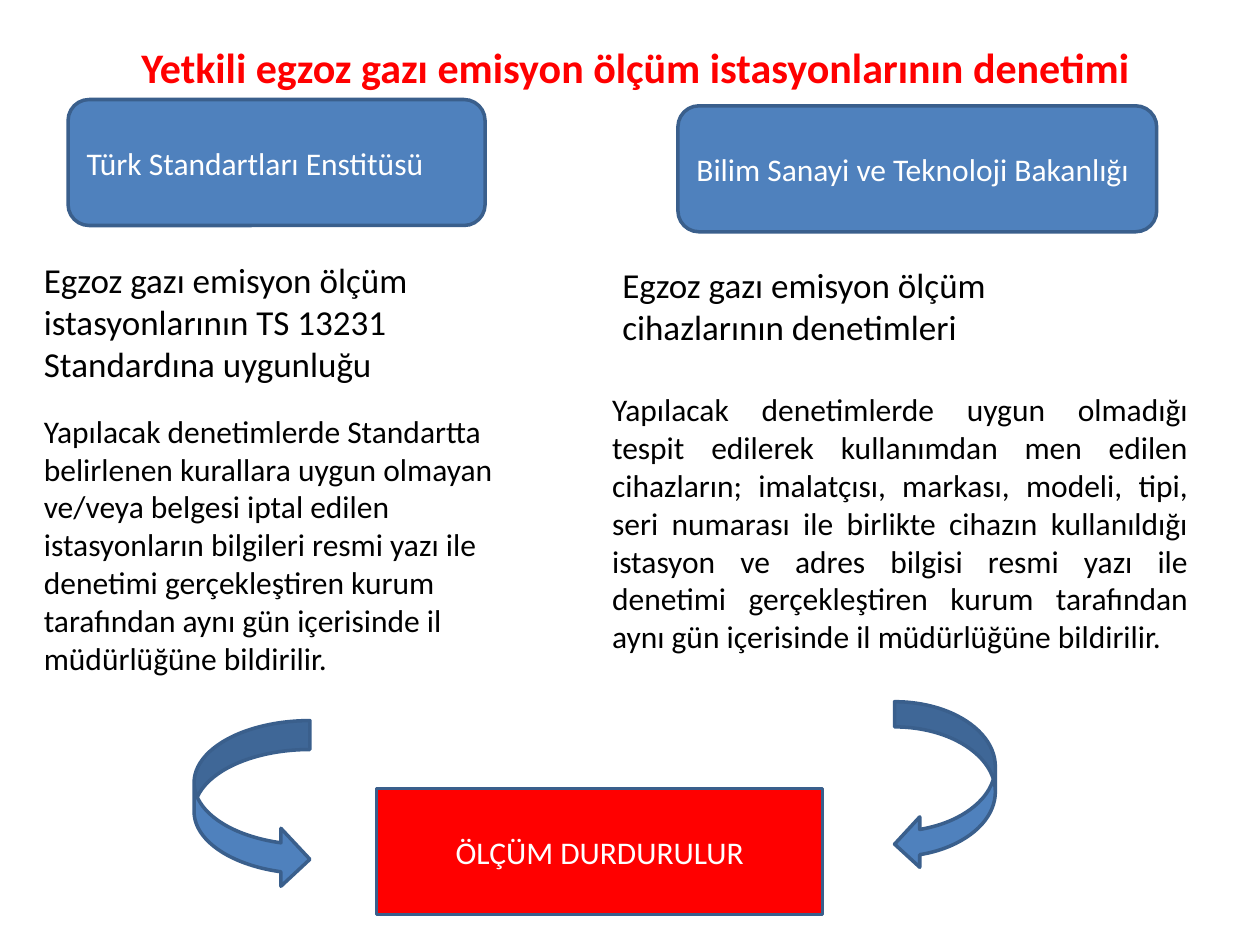
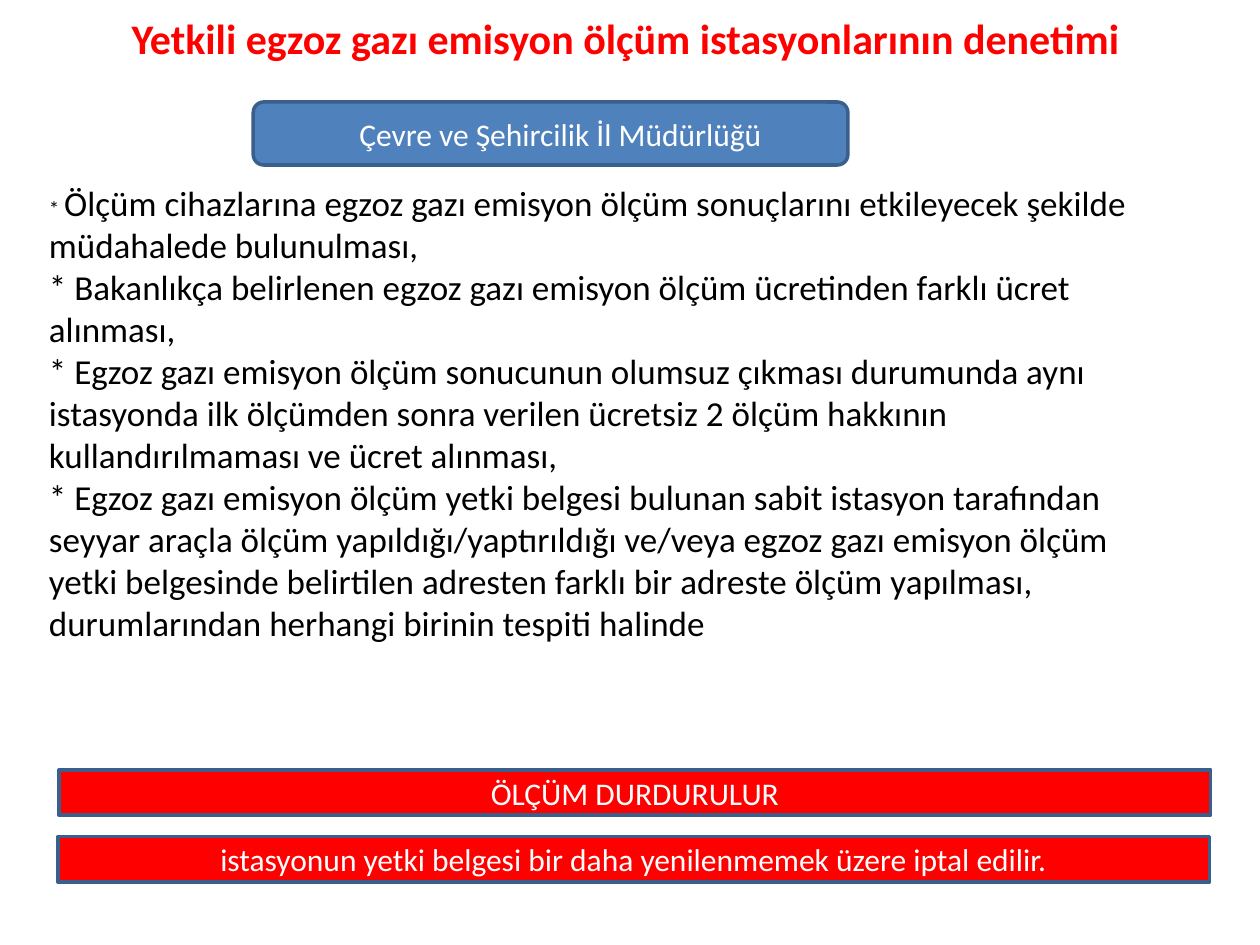
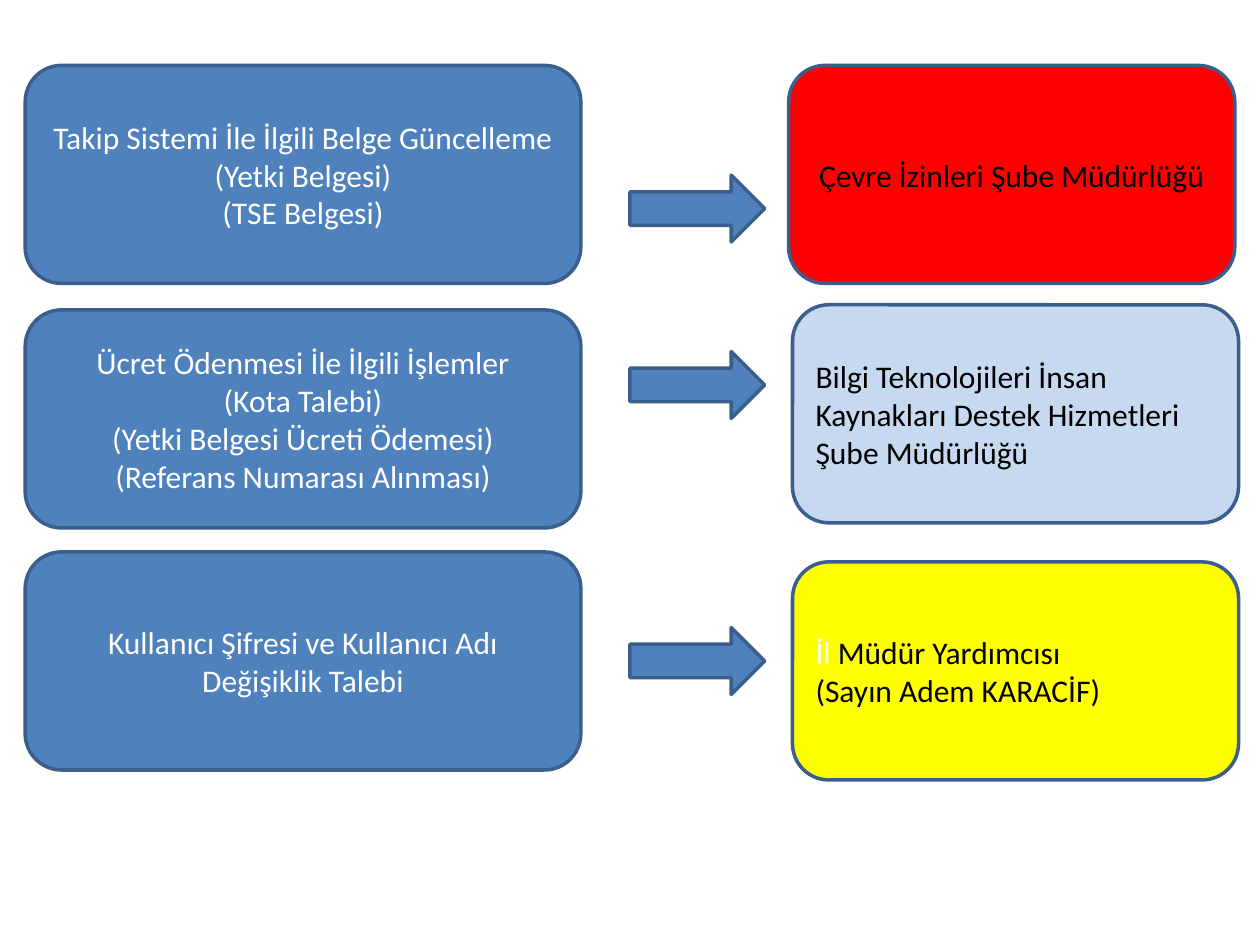
from dataclasses import dataclass
from typing import Optional

from pptx import Presentation
from pptx.dml.color import RGBColor
from pptx.enum.shapes import MSO_SHAPE as Shape
from pptx.enum.text import MSO_ANCHOR as Anchor, PP_ALIGN as Align
from pptx.util import Pt


@dataclass(frozen=True)
class Theme:
    font: str = "Calibri"
    blue: str = "4F81BD"
    outline: str = "3A5F8C"
    red: str = "FF0000"
    pale: str = "C6D9F1"
    yellow: str = "FFFF00"
    black: str = "000000"
    white: str = "FFFFFF"
    title: float = 24
    heading: float = 20
    body: float = 18
    small: float = 12
    border: float = 2


THEME = Theme()


@dataclass(frozen=True)
class Box:
    left: float
    top: float
    width: float
    height: float

    def lengths(self):
        return Pt(self.left), Pt(self.top), Pt(self.width), Pt(self.height)


@dataclass(frozen=True)
class Lead:
    text: str
    size: float
    color: str


@dataclass(frozen=True)
class Words:
    text: str
    size: float = THEME.body
    color: str = THEME.white
    align: Align = Align.CENTER
    bold: bool = False
    lead: Optional[Lead] = None


@dataclass(frozen=True)
class Panel:
    box: Box
    kind: Shape = Shape.ROUNDED_RECTANGLE
    words: Optional[Words] = None
    fill: str = THEME.blue
    margin_left: float = 7.2


@dataclass(frozen=True)
class Note:
    box: Box
    words: Words


@dataclass(frozen=True)
class Route:
    request: str
    request_top: float
    arrow_top: float
    office_left: float
    office_top: float
    office: Words
    office_fill: str


def style_run(run, size: float, color: str, bold: bool = False) -> None:
    run.font.name = THEME.font
    run.font.size = Pt(size)
    run.font.bold = bold
    run.font.color.rgb = RGBColor.from_string(color)


def write(frame, words: Words) -> None:
    frame.word_wrap = True
    frame.text = words.text
    for paragraph in frame.paragraphs:
        paragraph.alignment = words.align
        for run in paragraph.runs:
            style_run(run, words.size, words.color, words.bold)
    if words.lead:
        opening = frame.paragraphs[0]
        rest = opening.text
        opening.text = words.lead.text
        style_run(opening.runs[0], words.lead.size, words.lead.color)
        following = opening.add_run()
        following.text = rest
        style_run(following, words.size, words.color, words.bold)


def draw_note(slide, note: Note) -> None:
    write(slide.shapes.add_textbox(*note.box.lengths()).text_frame, note.words)


def draw_panel(slide, panel: Panel) -> None:
    shape = slide.shapes.add_shape(panel.kind, *panel.box.lengths())
    shape.shadow.inherit = False
    shape.fill.solid()
    shape.fill.fore_color.rgb = RGBColor.from_string(panel.fill)
    shape.line.color.rgb = RGBColor.from_string(THEME.outline)
    shape.line.width = Pt(THEME.border)
    if panel.words:
        shape.text_frame.vertical_anchor = Anchor.MIDDLE
        shape.text_frame.margin_left = Pt(panel.margin_left)
        write(shape.text_frame, panel.words)


def draw_title(slide, left: float, top: float) -> None:
    draw_note(slide, Note(Box(left, top, 674.6, 36), Words(
        "Yetkili egzoz gazı emisyon ölçüm istasyonlarının denetimi",
        THEME.title, THEME.red, bold=True)))


def stop_panel(box: Box, text: str = "ÖLÇÜM DURDURULUR") -> Panel:
    return Panel(box, Shape.RECTANGLE, Words(text), THEME.red)


def passage(text: str, size: float, align: Align = Align.LEFT,
            lead: Optional[Lead] = None) -> Words:
    return Words(text, size, THEME.black, align, lead=lead)


INSPECTORS = [
    Panel(Box(38.9, 56.9, 238.3, 72),
          words=Words("Türk Standartları Enstitüsü", align=Align.LEFT)),
    Panel(Box(387.4, 60.5, 273.6, 72),
          words=Words("Bilim Sanayi ve Teknoloji Bakanlığı", align=Align.LEFT)),
]

DUTIES = [
    Note(Box(18, 144, 268.6, 80), passage(
        "Egzoz gazı emisyon ölçüm istasyonlarının TS 13231 Standardına uygunluğu",
        THEME.heading)),
    Note(Box(348.5, 146.9, 296.6, 55.4), passage(
        "Egzoz gazı emisyon ölçüm cihazlarının denetimleri", THEME.heading)),
    Note(Box(18, 231.8, 278.6, 160), passage(
        "Yapılacak denetimlerde Standartta belirlenen kurallara uygun olmayan "
        "ve/veya belgesi iptal edilen istasyonların bilgileri resmi yazı ile "
        "denetimi gerçekleştiren kurum tarafından aynı gün içerisinde il "
        "müdürlüğüne bildirilir.", THEME.body)),
    Note(Box(342.7, 219.6, 343.4, 160), passage(
        "Yapılacak denetimlerde uygun olmadığı tespit edilerek kullanımdan men "
        "edilen cihazların; imalatçısı, markası, modeli, tipi, seri numarası ile "
        "birlikte cihazın kullanıldığı istasyon ve adres bilgisi resmi yazı ile "
        "denetimi gerçekleştiren kurum tarafından aynı gün içerisinde il "
        "müdürlüğüne bildirilir.", THEME.body, Align.JUSTIFY)),
]

OUTCOME = [
    stop_panel(Box(215.3, 450.7, 254.9, 72)),
    Panel(Box(110.9, 411.8, 66.2, 95.8), Shape.CURVED_RIGHT_ARROW),
    Panel(Box(511.2, 401, 57.6, 95.8), Shape.CURVED_LEFT_ARROW),
]

DIRECTORATE = Panel(Box(144.7, 58.3, 339.8, 36),
                    words=Words("Çevre ve Şehircilik İl Müdürlüğü"),
                    margin_left=18.5)

VIOLATIONS = Note(Box(20.9, 100.1, 663.1, 273.6), passage(
    "Ölçüm cihazlarına egzoz gazı emisyon ölçüm sonuçlarını etkileyecek şekilde "
    "müdahalede bulunulması,\n"
    "* Bakanlıkça belirlenen egzoz gazı emisyon ölçüm ücretinden farklı ücret "
    "alınması,\n"
    "* Egzoz gazı emisyon ölçüm sonucunun olumsuz çıkması durumunda aynı "
    "istasyonda ilk ölçümden sonra verilen ücretsiz 2 ölçüm hakkının "
    "kullandırılmaması ve ücret alınması,\n"
    "* Egzoz gazı emisyon ölçüm yetki belgesi bulunan sabit istasyon tarafından "
    "seyyar araçla ölçüm yapıldığı/yaptırıldığı ve/veya egzoz gazı emisyon ölçüm "
    "yetki belgesinde belirtilen adresten farklı bir adreste ölçüm yapılması,\n"
    "durumlarından herhangi birinin tespiti halinde",
    THEME.heading, lead=Lead("* ", THEME.small, THEME.black)))

SANCTIONS = [
    stop_panel(Box(33.8, 439.9, 658.1, 25.9)),
    stop_panel(Box(33.1, 478.1, 658.1, 25.9),
               "istasyonun yetki belgesi bir daha yenilenmemek üzere iptal edilir."),
]

ROUTES = [
    Route("Takip Sistemi İle İlgili Belge Güncelleme\n(Yetki Belgesi)\n(TSE Belgesi)",
          37.4, 100.1, 450.7, 37.4,
          passage("Çevre İzinleri Şube Müdürlüğü", THEME.body, Align.CENTER),
          THEME.red),
    Route("Ücret Ödenmesi İle İlgili İşlemler\n(Kota Talebi)\n"
          "(Yetki Belgesi Ücreti Ödemesi)\n(Referans Numarası Alınması)",
          177.1, 200.9, 452.9, 174.2,
          passage("Bilgi Teknolojileri İnsan Kaynakları Destek Hizmetleri "
                  "Şube Müdürlüğü", THEME.body),
          THEME.pale),
    Route("Kullanıcı Şifresi ve Kullanıcı Adı Değişiklik Talebi",
          315.4, 358.6, 452.9, 321.1,
          passage("Müdür Yardımcısı\n(Sayın Adem KARACİF)", THEME.body,
                  lead=Lead("İl ", THEME.body, THEME.white)),
          THEME.yellow),
]


def draw_route(slide, route: Route) -> None:
    row_height = 124.6
    draw_panel(slide, Panel(Box(14.4, route.request_top, 317.5, row_height),
                            words=Words(route.request)))
    draw_panel(slide, Panel(Box(360, route.arrow_top, 77, 38.2), Shape.RIGHT_ARROW))
    draw_panel(slide, Panel(
        Box(route.office_left, route.office_top, 254.9, row_height),
        words=route.office, fill=route.office_fill))


def build_inspection(slide) -> None:
    draw_title(slide, 25.9, 20.2)
    for inspector in INSPECTORS:
        draw_panel(slide, inspector)
    for duty in DUTIES:
        draw_note(slide, duty)
    for part in OUTCOME:
        draw_panel(slide, part)


def build_violations(slide) -> None:
    draw_title(slide, 20.2, 3.6)
    draw_panel(slide, DIRECTORATE)
    draw_note(slide, VIOLATIONS)
    for sanction in SANCTIONS:
        draw_panel(slide, sanction)


def build_routes(slide) -> None:
    for route in ROUTES:
        draw_route(slide, route)


def main() -> None:
    deck = Presentation()
    deck.slide_width, deck.slide_height = Pt(720), Pt(540)
    blank = deck.slide_layouts[6]
    for build in (build_inspection, build_violations, build_routes):
        build(deck.slides.add_slide(blank))
    deck.save("out.pptx")


if __name__ == "__main__":
    main()
